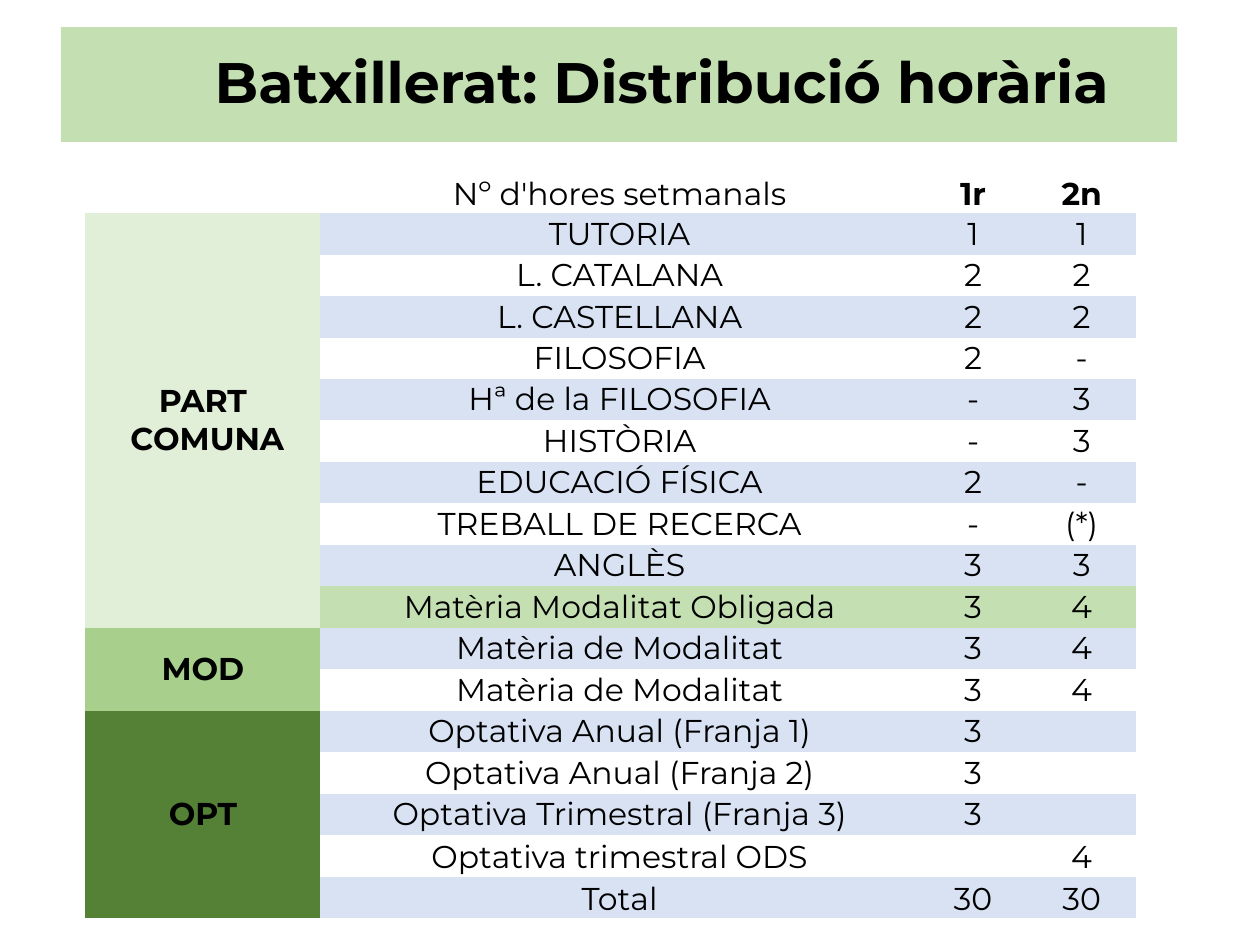
from pptx import Presentation
from pptx.dml.color import RGBColor
from pptx.enum.shapes import MSO_SHAPE as Shape
from pptx.enum.text import MSO_ANCHOR as Anchor, PP_ALIGN as Align
from pptx.oxml.ns import qn
from pptx.util import Cm, Pt

FONT = "Montserrat"
BLUE, GREEN = "D8E2F3", "C4E0B2"
NO_GRID_STYLE = "{2D5ABB26-0587-4C30-8999-92F81FD0307C}"
COLUMN_WIDTHS = (4.74, 12.06, 2.19, 2.19)
HEADER_HEIGHT = 0.76
HEADER = ("Nº d'hores setmanals", "1r", "2n")
GROUPS = [
    ("PART\n COMUNA", "E1EFD8", [
        ("TUTORIA", "1", "1"),
        ("L. CATALANA", "2", "2"),
        ("L. CASTELLANA", "2", "2"),
        ("FILOSOFIA", "2", "-"),
        ("Hª de la FILOSOFIA", "-", "3"),
        ("HISTÒRIA", "-", "3"),
        ("EDUCACIÓ FÍSICA", "2", "-"),
        ("TREBALL DE RECERCA", "-", "(*)"),
        ("ANGLÈS", "3", "3"),
        ("Matèria Modalitat Obligada", "3", "4"),
    ]),
    ("MOD", "A8D08C", [
        ("Matèria de Modalitat", "3", "4"),
        ("Matèria de Modalitat", "3", "4"),
    ]),
    ("OPT", "548135", [
        ("Optativa Anual (Franja 1)", "3", ""),
        ("Optativa Anual (Franja 2)", "3", ""),
        ("Optativa Trimestral (Franja 3)", "3", ""),
        ("Optativa trimestral ODS", "", "4"),
        ("Total", "30", "30"),
    ]),
]


def color(value):
    return RGBColor.from_string(value)


def paint(fill, value):
    if value:
        fill.solid()
        fill.fore_color.rgb = color(value)
    else:
        fill.background()


def write(frame, text, size=18, bold=False, align=Align.CENTER, spacing=None):
    frame.text = text
    for paragraph in frame.paragraphs:
        paragraph.alignment = align
        paragraph.line_spacing = spacing
        for run in paragraph.runs:
            run.font.name = FONT
            run.font.size = Pt(size)
            run.font.bold = bold
            run.font.color.rgb = color("000000")


def add_title(slide, left, top, width, height):
    shape = slide.shapes.add_shape(
        Shape.RECTANGLE, Cm(left), Cm(top), Cm(width), Cm(height))
    shape.shadow.inherit = False
    paint(shape.fill, GREEN)
    shape.line.fill.background()
    frame = shape.text_frame
    frame.word_wrap = True
    frame.vertical_anchor = Anchor.MIDDLE
    frame.margin_left, frame.margin_right = Cm(3.1), Cm(0.18)
    frame.margin_top = frame.margin_bottom = Cm(0.1)
    write(frame, "Batxillerat: Distribució horària", size=32.6, bold=True,
          align=Align.LEFT, spacing=0.9)


def fill_cell(cell, text, fill=None, bold=False, anchor=Anchor.MIDDLE):
    cell.margin_left = cell.margin_right = Cm(0.15)
    cell.margin_top = cell.margin_bottom = 0
    cell.vertical_anchor = anchor
    paint(cell.fill, fill)
    write(cell.text_frame, text, bold=bold)


def fill_group(table, first, label, label_fill, subjects):
    label_cell = table.cell(first, 0)
    label_cell.merge(table.cell(first + len(subjects) - 1, 0))
    fill_cell(label_cell, label, label_fill, bold=True)
    for row, subject in enumerate(subjects, first):
        fill = BLUE if row % 2 else None
        if subject[0] == "Matèria Modalitat Obligada":
            fill = GREEN
        anchor = Anchor.BOTTOM if row >= len(table.rows) - 2 else Anchor.MIDDLE
        for column, text in enumerate(subject, 1):
            fill_cell(table.cell(row, column), text, fill, anchor=anchor)


def add_timetable(slide, left, top, height):
    body_rows = sum(len(subjects) for _, _, subjects in GROUPS)
    table = slide.shapes.add_table(
        body_rows + 1, len(COLUMN_WIDTHS), Cm(left), Cm(top),
        Cm(sum(COLUMN_WIDTHS)), Cm(height)).table
    table.first_row = table.horz_banding = False
    table._tbl.tblPr.find(qn("a:tableStyleId")).text = NO_GRID_STYLE
    for column, width in zip(table.columns, COLUMN_WIDTHS):
        column.width = Cm(width)
    for row in table.rows:
        row.height = Cm((height - HEADER_HEIGHT) / body_rows)
    table.rows[0].height = Cm(HEADER_HEIGHT)

    fill_cell(table.cell(0, 0), "")
    for column, text in enumerate(HEADER, 1):
        fill_cell(table.cell(0, column), text, bold=column > 1)
    first = 1
    for label, label_fill, subjects in GROUPS:
        fill_group(table, first, label, label_fill, subjects)
        first += len(subjects)


def main():
    presentation = Presentation()
    presentation.slide_width, presentation.slide_height = Cm(25.4), Cm(19.05)
    slide = presentation.slides.add_slide(presentation.slide_layouts[6])
    add_title(slide, 1.23, 0.55, 22.5, 2.31)
    add_timetable(slide, 1.72, 3.52, 14.98)
    presentation.save("out.pptx")


if __name__ == "__main__":
    main()
